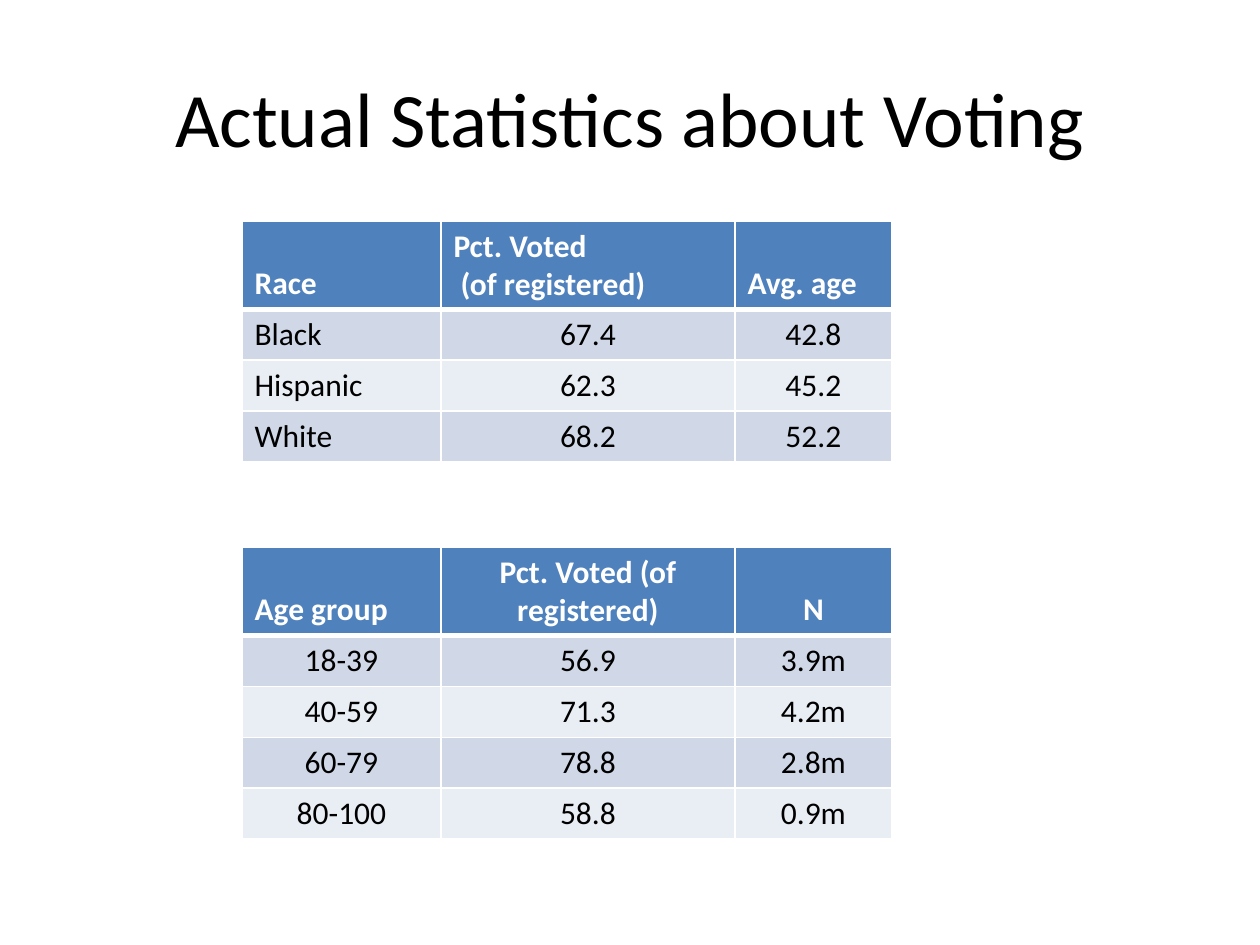
from lxml.etree import SubElement
from pptx import Presentation
from pptx.dml.color import RGBColor
from pptx.enum.text import MSO_ANCHOR, PP_ALIGN
from pptx.oxml.ns import qn
from pptx.util import Emu, Pt

PX = 914400 // 126
FONT = "Calibri"
BLACK = RGBColor(0x00, 0x00, 0x00)
WHITE = RGBColor(0xFF, 0xFF, 0xFF)
BLUE = RGBColor(0x4F, 0x81, 0xBD)
BANDS = [RGBColor(0xE9, 0xED, 0xF4), RGBColor(0xD0, 0xD8, 0xE8)]
ALIGN = {"l": PP_ALIGN.LEFT, "c": PP_ALIGN.CENTER}

LEFT = 242
COLS = [199, 294, 157]
HEAD, ROW = 88, 51

TABLES = [
    (221, "lll", "lcc", [
        ["Race", "Pct. Voted\n (of registered)", "Avg. age"],
        ["Black", "67.4", "42.8"],
        ["Hispanic", "62.3", "45.2"],
        ["White", "68.2", "52.2"],
    ]),
    (547, "lcc", "ccc", [
        ["Age group", "Pct. Voted (of registered)", "N"],
        ["18-39", "56.9", "3.9m"],
        ["40-59", "71.3", "4.2m"],
        ["60-79", "78.8", "2.8m"],
        ["80-100", "58.8", "0.9m"],
    ]),
]


def style(frame, align, size, color, bold=False):
    for para in frame.paragraphs:
        para.alignment = align
        for run in para.runs:
            font = run.font
            font.name, font.size, font.bold = FONT, Pt(size), bold
            font.color.rgb = color


def border(cell, top, low):
    props = cell._tc.get_or_add_tcPr()
    for side, width in zip("LRTB", (1, 1, top, low)):
        line = SubElement(props, qn("a:ln" + side), w=str(Pt(width)))
        fill = SubElement(line, qn("a:solidFill"))
        SubElement(fill, qn("a:srgbClr"), val=str(WHITE))


deck = Presentation()
deck.slide_width, deck.slide_height = Emu(1260 * PX), Emu(945 * PX)
slide = deck.slides.add_slide(deck.slide_layouts[6])

title = slide.shapes.add_textbox(63 * PX, 38 * PX, 1134 * PX, 157 * PX)
frame = title.text_frame
frame.word_wrap = True
frame.vertical_anchor = MSO_ANCHOR.MIDDLE
frame.text = "Actual Statistics about Voting"
style(frame, PP_ALIGN.CENTER, 44, BLACK)

for top, heads, body, rows in TABLES:
    high = HEAD + ROW * (len(rows) - 1)
    shape = slide.shapes.add_table(
        len(rows), len(COLS), LEFT * PX, top * PX, sum(COLS) * PX, high * PX)
    table = shape.table
    for col, width in zip(table.columns, COLS):
        col.width = Emu(width * PX)
    for r, row in enumerate(rows):
        first = r == 0
        table.rows[r].height = Emu((HEAD if first else ROW) * PX)
        for c, text in enumerate(row):
            cell = table.cell(r, c)
            cell.text_frame.text = text
            border(cell, 3 if r == 1 else 1, 3 if first else 1)
            cell.fill.solid()
            cell.fill.fore_color.rgb = BLUE if first else BANDS[r % 2]
            cell.vertical_anchor = MSO_ANCHOR.BOTTOM if first else MSO_ANCHOR.TOP
            align = ALIGN[(heads if first else body)[c]]
            style(cell.text_frame, align, 18, WHITE if first else BLACK, first)

deck.save("out.pptx")
